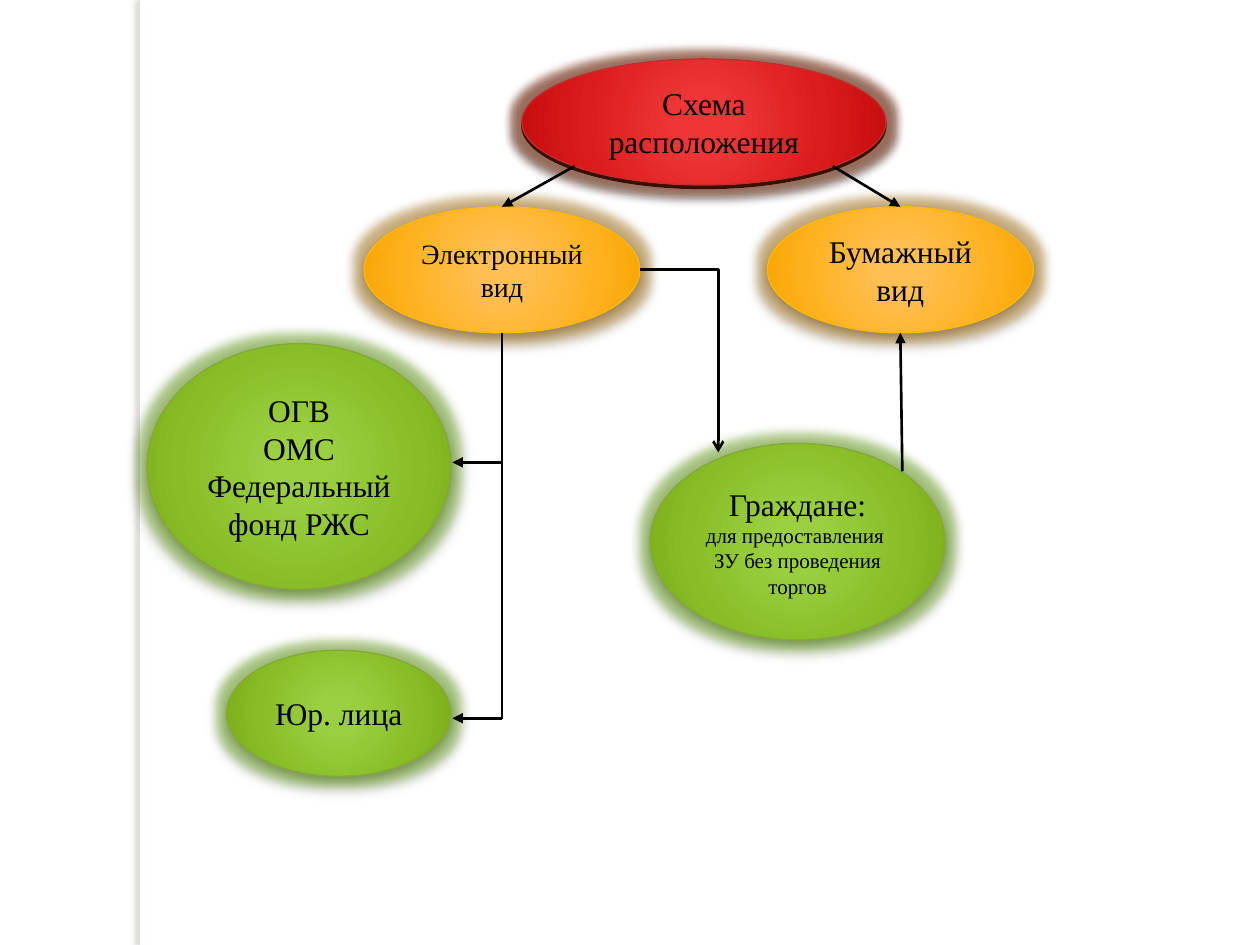
from lxml.etree import SubElement
from pptx import Presentation
from pptx.dml.color import RGBColor
from pptx.enum.shapes import MSO_CONNECTOR as LINK, MSO_SHAPE as SHAPE
from pptx.enum.text import MSO_ANCHOR as ANCHOR, PP_ALIGN as ALIGN
from pptx.oxml import parse_xml
from pptx.oxml.ns import nsdecls, qn
from pptx.util import Cm, Pt

FONT = "Times New Roman"
STOPS = (0, 15, 62, 97, 100)
STYLES = {
    "red": {"grad": ("EF3737", "EE3637", "DB1C1C", "C70C0D", "C30001"),
            "line": "C32D2E", "glow": "932A00", "shadow": ("000000", 100, 0, 2, 90)},
    "orange": {"grad": ("FFBF54", "FFBF53", "FFB221", "F6A500", "D69900"),
               "line": "FEB80A", "glow": "AF7000", "shadow": ("000000", 43, 5, 2, 90)},
    "green": {"grad": ("9AD041", "9ACF41", "88BD27", "79AB17", "77AC08"),
              "line": "84AA33", "glow": "5CA200", "shadow": ("000000", 43, 5, 2, 90)},
}
OVALS = {
    "scheme": ((7.55, 0, 7.34, 2.54), "red", [("Схема расположения", 18)]),
    "paper": ((12.5, 2.98, 5.36, 2.54), "orange", [("Бумажный вид", 18)]),
    "electronic": ((4.37, 2.98, 5.56, 2.54), "orange", [("Электронный", 16), ("вид", 16)]),
    "authorities": ((0, 5.74, 6.12, 4.95), "green",
                    [("ОГВ", 18), ("ОМС", 18), ("Федеральный фонд РЖС", 18)]),
    "companies": ((1.6, 11.92, 4.52, 2.54), "green", [("Юр. лица", 18)]),
    "citizens": ((10.14, 7.75, 5.94, 3.96), "green",
                 [("Граждане:", 18), ("для предоставления  ЗУ без проведения торгов", 12)]),
}
LINES = [
    ((7.15, 5.52, 7.15, 13.31), None, None),
    ((7.15, 8.13, 6.15, 8.13), "triangle", None),
    ((7.15, 13.29, 6.15, 13.29), "triangle", None),
    ((15.22, 8.31, 15.18, 5.52), "triangle", None),
    ((8.61, 2.16, 7.15, 2.98), "triangle", "electronic"),
    ((13.82, 2.16, 15.18, 2.98), "triangle", "paper"),
    ((9.93, 4.25, 11.51, 7.93), "arrow", None),
]


def color(value):
    return RGBColor.from_string(value)


def set_all(target, values):
    for name, value in values.items():
        setattr(target, name, value)


def add_effects(shape, shadow, glow=None):
    tone, alpha, blur, distance, angle = shadow
    halo = (f'<a:glow rad="{Pt(11)}"><a:srgbClr val="{glow}">'
            '<a:alpha val="40000"/></a:srgbClr></a:glow>') if glow else ""
    shape._element.spPr.append(parse_xml(
        f'<a:effectLst {nsdecls("a")}>{halo}<a:outerShdw blurRad="{Pt(blur)}" '
        f'dist="{Pt(distance)}" dir="{angle * 60000}" rotWithShape="0">'
        f'<a:srgbClr val="{tone}"><a:alpha val="{alpha * 1000}"/></a:srgbClr>'
        '</a:outerShdw></a:effectLst>'))


def fill_radial(shape, tones):
    stops = "".join(f'<a:gs pos="{stop * 1000}"><a:srgbClr val="{tone}"/></a:gs>'
                    for stop, tone in zip(STOPS, tones))
    shape._element.spPr.find(qn("a:prstGeom")).addnext(parse_xml(
        f'<a:gradFill {nsdecls("a")} rotWithShape="1"><a:gsLst>{stops}</a:gsLst>'
        '<a:path path="circle"><a:fillToRect l="50000" t="50000" r="50000" b="50000"/>'
        '</a:path></a:gradFill>'))


def add_side_strip(page, box):
    strip = page.shapes.add_shape(SHAPE.RECTANGLE, *map(Cm, box))
    strip.fill.solid()
    strip.fill.fore_color.rgb = color("FFFFFF")
    strip.line.fill.background()
    add_effects(strip, ("736F63", 25, 3, 3, 180))


def add_oval(page, box, style, lines):
    oval = page.shapes.add_shape(SHAPE.OVAL, *map(Cm, box))
    look = STYLES[style]
    fill_radial(oval, look["grad"])
    oval.line.color.rgb = color(look["line"])
    oval.line.width = Pt(0.75)
    add_effects(oval, look["shadow"], look["glow"])
    frame = oval.text_frame
    set_all(frame, {"word_wrap": True, "vertical_anchor": ANCHOR.MIDDLE})
    for index, (text, size) in enumerate(lines):
        para = frame.add_paragraph() if index else frame.paragraphs[0]
        para.alignment = ALIGN.CENTER
        span = para.add_run()
        span.text = text
        set_all(span.font, {"name": FONT, "size": Pt(size)})
        span.font.color.rgb = color("000000")
    return oval


def add_line(page, ends, arrow, target):
    bent = arrow == "arrow"
    line = page.shapes.add_connector(LINK.ELBOW if bent else LINK.STRAIGHT, *map(Cm, ends))
    if bent:
        line._element.spPr.find(qn("a:prstGeom")).set("prst", "bentConnector2")
    if target is not None:
        line.end_connect(target, 0)
    line.line.color.rgb = color("000000")
    line.line.width = Pt(1.5)
    if arrow:
        SubElement(line.line._get_or_add_ln(), qn("a:tailEnd"), type=arrow)
    SubElement(line._element.spPr, qn("a:effectLst"))


def add_diagram(page, left, top):
    ovals = {}
    for name, ((x, y, width, height), style, lines) in OVALS.items():
        ovals[name] = add_oval(page, (left + x, top + y, width, height), style, lines)
    for (x1, y1, x2, y2), arrow, target in LINES:
        ends = (left + x1, top + y1, left + x2, top + y2)
        add_line(page, ends, arrow, ovals.get(target))


def main():
    deck = Presentation()
    set_all(deck, {"slide_width": Cm(25.4), "slide_height": Cm(19.05)})
    page = deck.slides.add_slide(deck.slide_layouts[6])
    add_side_strip(page, (2.82, 0, 0.2, 19.05))
    add_diagram(page, 2.97, 1.19)
    deck.save("out.pptx")


if __name__ == "__main__":
    main()
